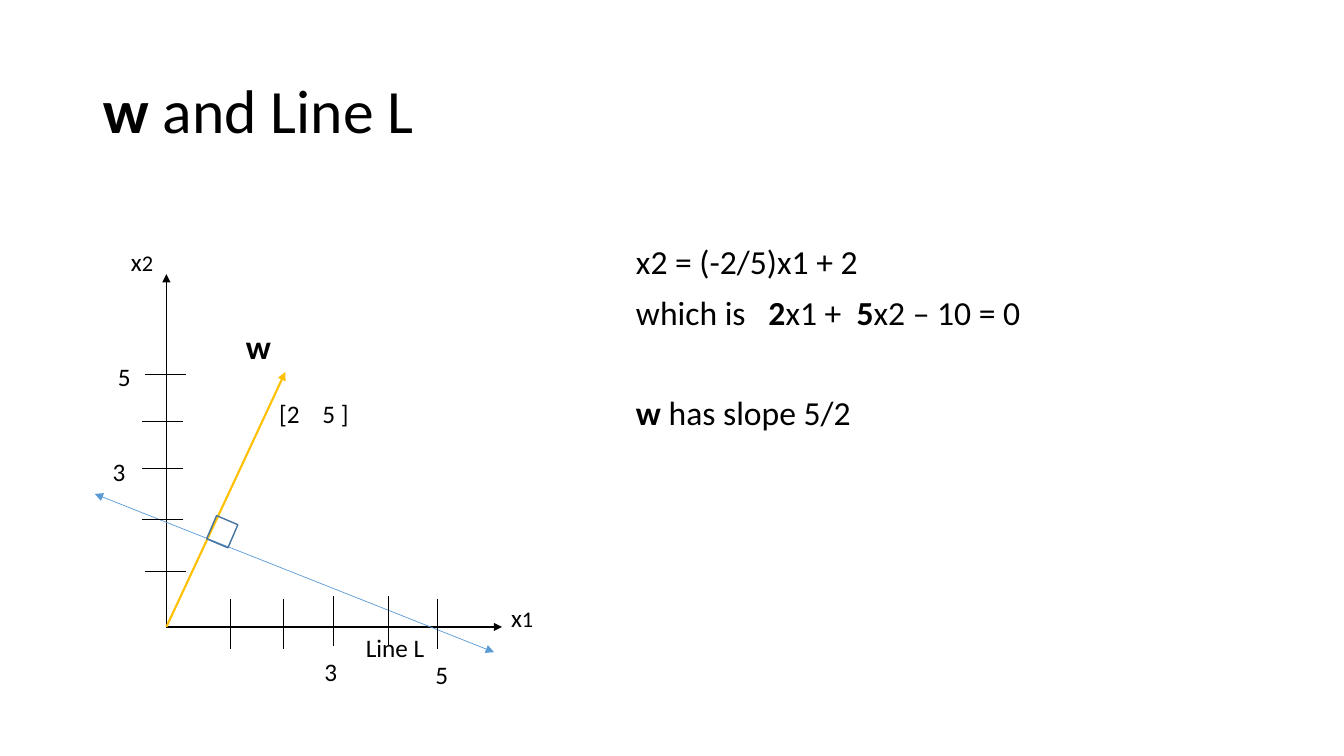
from dataclasses import dataclass

from lxml.etree import SubElement
from pptx import Presentation
from pptx.dml.color import RGBColor
from pptx.enum.shapes import MSO_CONNECTOR, MSO_SHAPE
from pptx.enum.text import MSO_ANCHOR, MSO_AUTO_SIZE, PP_ALIGN
from pptx.oxml.ns import qn
from pptx.util import Inches, Pt


@dataclass(frozen=True)
class Theme:
    font: str = "Calibri"
    ink: RGBColor = RGBColor(0x00, 0x00, 0x00)
    vector: RGBColor = RGBColor(0xFF, 0xC0, 0x00)
    line: RGBColor = RGBColor(0x5B, 0x9B, 0xD5)
    corner: RGBColor = RGBColor(0x43, 0x73, 0x9E)
    title: int = 44
    body: int = 24
    label: int = 18
    index: int = 16


theme = Theme()
COLUMNS, ROWS = 13.33, 7.5

deck = Presentation()
deck.slide_width, deck.slide_height = Inches(COLUMNS), Inches(ROWS)
page = deck.slides.add_slide(deck.slide_layouts[5])
column, row = deck.slide_width / COLUMNS, deck.slide_height / ROWS


def add_line(start, end, color, width, arrows=()):
    """Join two grid points; arrows lists the ends with a triangle, headEnd before tailEnd."""
    line = page.shapes.add_connector(
        MSO_CONNECTOR.STRAIGHT,
        int(start[0] * column), int(start[1] * row),
        int(end[0] * column), int(end[1] * row))
    line.line.color.rgb = color
    line.line.width = Pt(width)
    for arrow in arrows:
        SubElement(line.line._get_or_add_ln(), qn("a:" + arrow), type="triangle")
    SubElement(line._element.spPr, qn("a:effectLst"))


def write(para, spans, size):
    """Fill a paragraph with (text, bold) spans."""
    para.font.name, para.font.size = theme.font, Pt(size)
    para.font.color.rgb = theme.ink
    para.alignment = PP_ALIGN.LEFT
    for text, bold in spans:
        span = para.add_run()
        span.text, span.font.bold = text, bold


# Title
title = page.shapes.title
title.left, title.top = int(0.92 * column), int(0.4 * row)
title.width, title.height = int(11.5 * column), int(1.45 * row)
title.text_frame.vertical_anchor = MSO_ANCHOR.MIDDLE
title.text_frame.auto_size = MSO_AUTO_SIZE.NONE
heading = title.text_frame.paragraphs[0]
write(heading, [("w", True), (" and Line L", False)], theme.title)
heading.line_spacing = 0.9

# Equations
equations = [
    (10, [("x2 = (-2/5)x1 + 2", False)]),
    (10, [("which is   ", False), ("2", True), ("x1 +  ", False),
          ("5", True), ("x2 – 10 = 0", False)]),
    (46, [("w", True), (" has slope 5/2", False)]),
]
box = page.shapes.add_textbox(
    int(6.21 * column), int(2.39 * row), int(6.47 * column), int(4.81 * row))
box.text_frame.word_wrap = True
for number, (gap, spans) in enumerate(equations):
    para = box.text_frame.add_paragraph() if number else box.text_frame.paragraphs[0]
    write(para, spans, theme.body)
    para.line_spacing, para.space_before = 0.9, Pt(gap)

# Axes, vector w and line L
origin = (1.65, 6.22)
add_line(origin, (1.65, 2.72), theme.ink, 1, ["tailEnd"])
add_line(origin, (4.98, 6.22), theme.ink, 1, ["tailEnd"])
add_line(origin, (2.83, 3.69), theme.vector, 1.5, ["tailEnd"])
add_line((0.94, 4.9), (4.9, 6.47), theme.line, 0.5, ["headEnd", "tailEnd"])

# Tick marks
for x, top in [(2.28, 5.94), (2.81, 5.94), (3.31, 5.91), (3.85, 5.91), (4.34, 5.94)]:
    add_line((x, top), (x, top + 0.5), theme.ink, 0.5)
for left, y in [(1.44, 3.71), (1.41, 4.18), (1.41, 4.65), (1.41, 5.15), (1.44, 5.67)]:
    add_line((left, y), (left + 0.41, y), theme.ink, 0.5)

# Right angle between w and L
corner = page.shapes.add_shape(
    MSO_SHAPE.RECTANGLE,
    int(2.09 * column), int(5.15 * row), int(0.23 * column), int(0.25 * row))
corner.rotation = 23.2
corner.shadow.inherit = False
corner.fill.background()
corner.line.color.rgb = theme.corner
corner.line.width = Pt(1)

# Labels: left, top, width, height, text, size, bold
labels = [
    (4.97, 5.93, 0.42, 0.4, "x1", theme.label, False),
    (1.2, 2.39, 0.42, 0.4, "x2", theme.label, False),
    (2.34, 3.18, 0.49, 0.5, "w", theme.body, True),
    (3.12, 6.46, 0.74, 0.4, "3", theme.label, False),
    (4.22, 6.49, 0.74, 0.4, "5", theme.label, False),
    (1.02, 4.48, 0.74, 0.4, "3", theme.label, False),
    (1.07, 3.54, 0.37, 0.4, "5", theme.label, False),
    (3.53, 6.22, 1.21, 0.4, "Line L", theme.label, False),
    (2.67, 3.9, 0.96, 0.4, "[2    5 ]", theme.label, False),
]
for left, top, width, height, text, size, bold in labels:
    label = page.shapes.add_textbox(
        int(left * column), int(top * row), int(width * column), int(height * row))
    is_axis = text.startswith("x")
    label.text_frame.word_wrap = not is_axis
    label.text_frame.auto_size = MSO_AUTO_SIZE.SHAPE_TO_FIT_TEXT
    para = label.text_frame.paragraphs[0]
    write(para, [(part, bold) for part in (text if is_axis else [text])], size)
    if is_axis:
        para.runs[1].font.size = Pt(theme.index)

deck.save("out.pptx")
